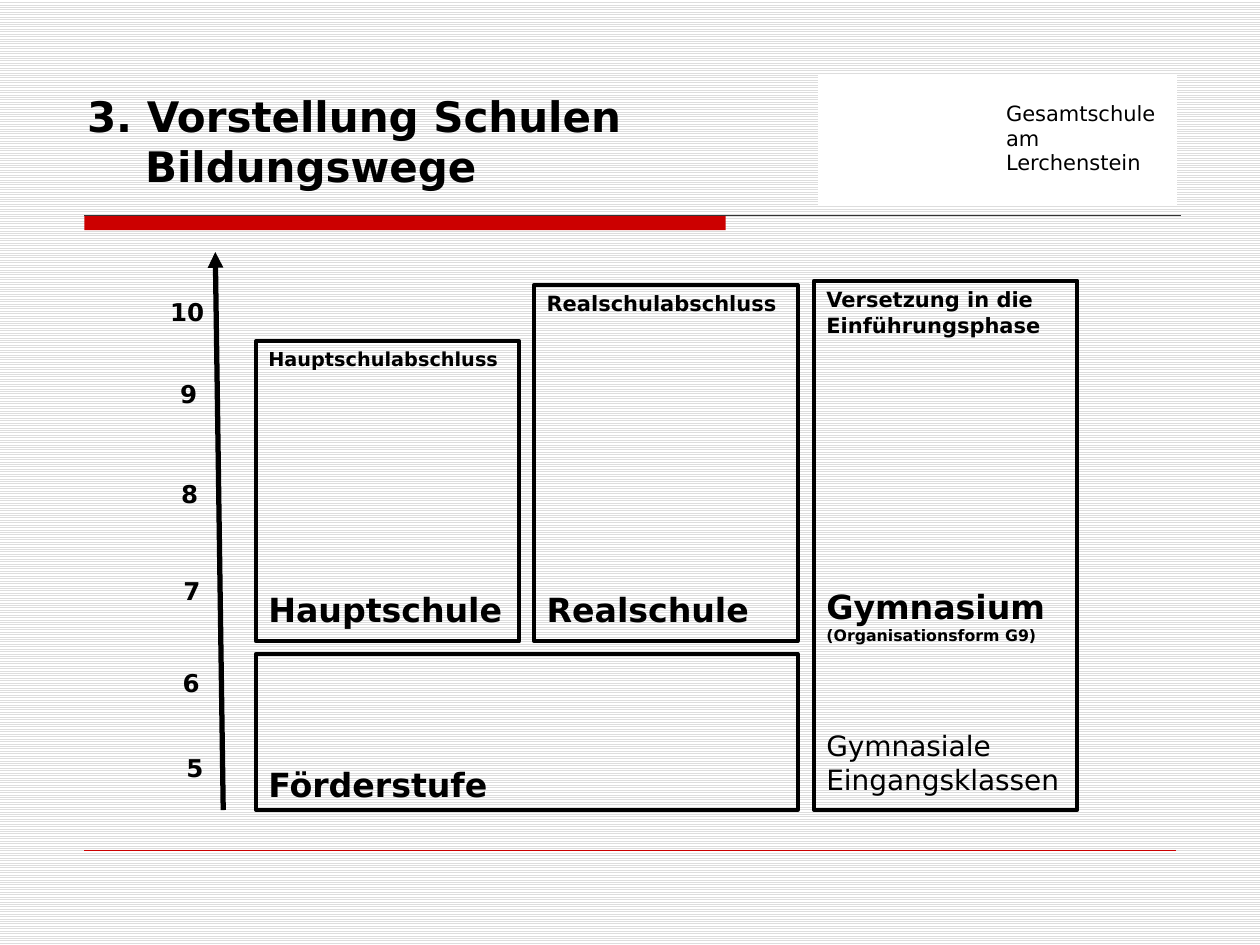
from lxml import etree
from pptx import Presentation
from pptx.dml.color import RGBColor
from pptx.enum.dml import MSO_PATTERN
from pptx.enum.shapes import MSO_CONNECTOR, MSO_SHAPE
from pptx.enum.text import MSO_ANCHOR, PP_ALIGN
from pptx.oxml.ns import qn
from pptx.util import Cm, Pt

BLACK = RGBColor(0, 0, 0)
WHITE = RGBColor(255, 255, 255)
RED = RGBColor(0xCC, 0, 0)
DARK = RGBColor(0x33, 0x33, 0x33)
STRIPE = RGBColor(0xDD, 0xDD, 0xDD)
FONT = "DejaVu Sans"
STRAIGHT = MSO_CONNECTOR.STRAIGHT
RECTANGLE = MSO_SHAPE.RECTANGLE
LEFT = PP_ALIGN.LEFT
TOP, BOTTOM = MSO_ANCHOR.TOP, MSO_ANCHOR.BOTTOM


def style_paragraph(paragraph, size, bold):
    paragraph.alignment = LEFT
    for run in paragraph.runs:
        run.font.name = FONT
        run.font.size = Pt(size)
        run.font.bold = bold
        run.font.color.rgb = BLACK


def add_line(start_x, start_y, end_x, end_y, color, width):
    line = slide.shapes.add_connector(
        STRAIGHT, Cm(start_x), Cm(start_y), Cm(end_x), Cm(end_y))
    line.line.color.rgb = color
    line.line.width = Pt(width)
    etree.SubElement(line._element.spPr, qn("a:effectLst"))
    return line


presentation = Presentation()
presentation.slide_width = Cm(25.4)
presentation.slide_height = Cm(19.05)
slide = presentation.slides.add_slide(presentation.slide_layouts[5])

background = slide.background.fill
background.patterned()
background.pattern = MSO_PATTERN.LIGHT_HORIZONTAL
background.fore_color.rgb = STRIPE
background.back_color.rgb = WHITE

accent_bar = slide.shapes.add_shape(RECTANGLE, Cm(1.7), Cm(4.34), Cm(12.93), Cm(0.3))
accent_bar.shadow.inherit = False
accent_bar.fill.solid()
accent_bar.fill.fore_color.rgb = RED
accent_bar.line.fill.background()
add_line(1.7, 4.34, 23.8, 4.34, DARK, 0.75)
add_line(1.7, 17.15, 23.7, 17.15, RED, 0.25)

title = slide.shapes.title
title.left, title.top, title.width, title.height = Cm(1.5), Cm(2.51), Cm(21.79), Cm(1.47)
title.text_frame.text = "3. Vorstellung Schulen\vBildungswege"
title.text_frame.vertical_anchor = BOTTOM
title_paragraph = title.text_frame.paragraphs[0]
style_paragraph(title_paragraph, 24, True)
title_properties = title_paragraph._p.get_or_add_pPr()
title_properties.set("marL", str(Cm(1.17)))
title_properties.set("indent", str(-Cm(1.17)))

school_boxes = [
    (5.16, 13.18, 10.92, 3.15, BOTTOM, [("Förderstufe", 19, True, 0)]),
    (5.16, 6.88, 5.31, 6.05, TOP, [
        ("Hauptschulabschluss", 11, True, 0), ("Hauptschule", 19, True, 125)]),
    (10.77, 5.74, 5.31, 7.19, TOP, [
        ("Realschulabschluss", 12, True, 0), ("Realschule", 19, True, 156)]),
    (16.41, 5.66, 5.31, 10.67, TOP, [
        ("Versetzung in die", 12, True, 0), ("Einführungsphase", 12, True, 0),
        ("Gymnasium", 19, True, 142), ("(Organisationsform G9)", 9, True, 0),
        ("Gymnasiale Eingangsklassen", 16, False, 48)]),
]
for left, top, width, height, anchor, lines in school_boxes:
    box = slide.shapes.add_shape(RECTANGLE, Cm(left), Cm(top), Cm(width), Cm(height))
    box.shadow.inherit = False
    box.fill.background()
    box.line.color.rgb = BLACK
    box.line.width = Pt(2.25)
    box.text_frame.word_wrap = True
    box.text_frame.vertical_anchor = anchor
    box.text_frame.text = "\n".join(line[0] for line in lines)
    for paragraph, (text, size, bold, gap) in zip(box.text_frame.paragraphs, lines):
        style_paragraph(paragraph, size, bold)
        paragraph.space_before = Pt(gap)

grades = [
    (5, 3.51, 15.06), (6, 3.43, 13.34), (7, 3.45, 11.48),
    (8, 3.4, 9.53), (9, 3.38, 7.52), (10, 3.18, 5.87),
]
for grade, left, top in grades:
    label = slide.shapes.add_textbox(
        Cm(left), Cm(top), Cm(1.24 if grade == 10 else 0.92), Cm(0.86))
    label.text_frame.word_wrap = False
    label.text_frame.text = str(grade)
    style_paragraph(label.text_frame.paragraphs[0], 14, True)

grade_axis = add_line(4.5, 16.33, 4.34, 5.08, BLACK, 3)
etree.SubElement(grade_axis.line._get_or_add_ln(), qn("a:tailEnd"), type="triangle")

school_table = slide.shapes.add_table(
    1, 2, Cm(16.5), Cm(1.53), Cm(7.22), Cm(2.58)).table
school_table.columns[0].width = Cm(3.28)
school_table.columns[1].width = Cm(3.94)
for cell in school_table.iter_cells():
    cell.fill.solid()
    cell.fill.fore_color.rgb = WHITE
name_cell = school_table.cell(0, 1)
name_cell.margin_left = Cm(0.5)
name_cell.margin_top = Cm(0.53)
name_cell.text_frame.text = "Gesamtschule\nam\nLerchenstein"
for paragraph in name_cell.text_frame.paragraphs:
    style_paragraph(paragraph, 12, False)

presentation.save("out.pptx")
